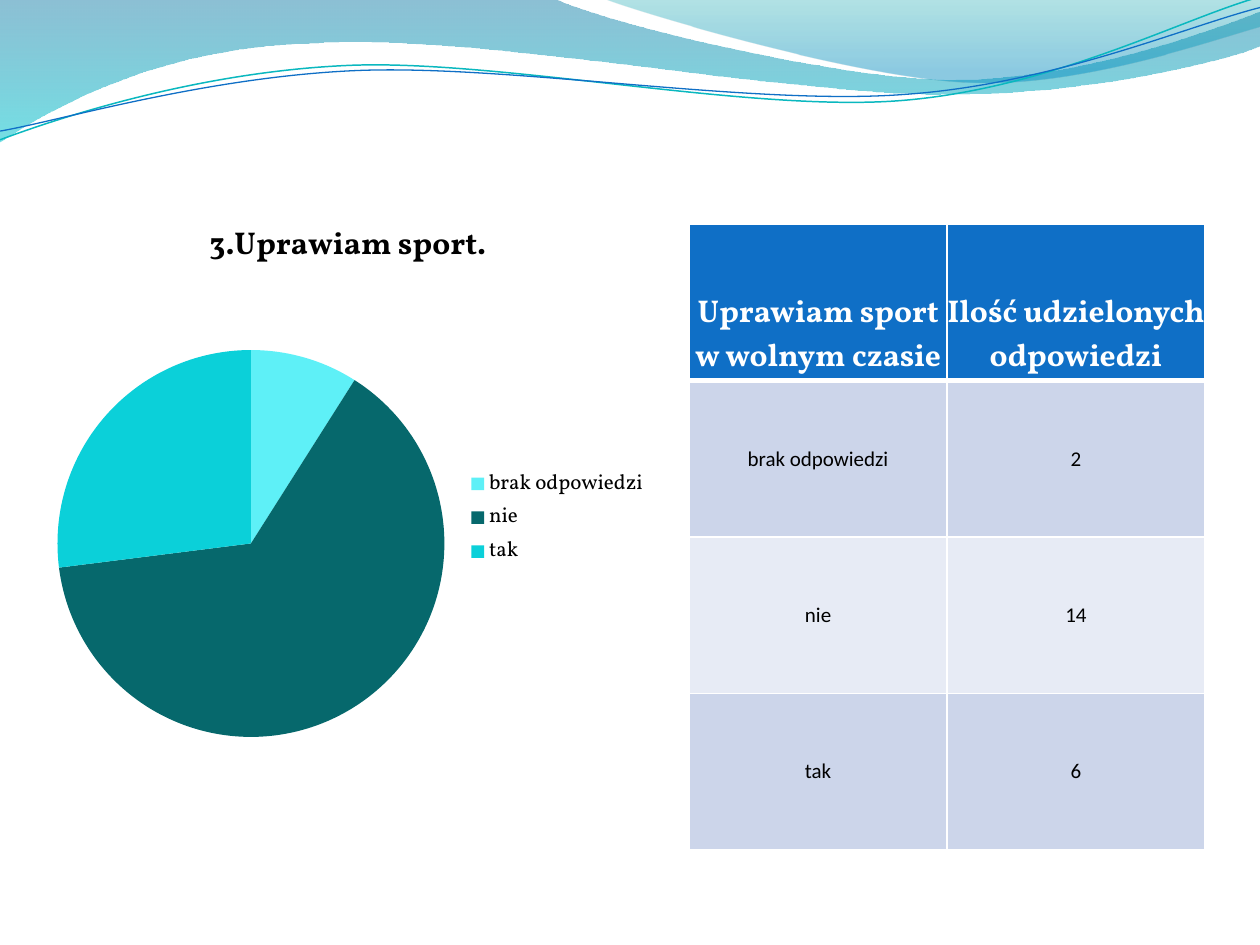
from lxml import etree
from pptx import Presentation
from pptx.chart.data import CategoryChartData
from pptx.dml.color import RGBColor
from pptx.enum.chart import XL_CHART_TYPE, XL_LEGEND_POSITION
from pptx.enum.text import MSO_ANCHOR, PP_ALIGN
from pptx.oxml.ns import qn
from pptx.util import Pt

PIE = XL_CHART_TYPE.PIE
LEGEND_RIGHT = XL_LEGEND_POSITION.RIGHT
BOTTOM, MIDDLE = MSO_ANCHOR.BOTTOM, MSO_ANCHOR.MIDDLE
CENTER = PP_ALIGN.CENTER

HEADING_FONT, BODY_FONT = "Vollkorn", "Calibri"

BANDS = [
    ([(0, 0), (316.8, -0.7),
      (342.7, 12.2, 478.1, 45.4, 545.8, 45.4),
      (614.2, 45.4, 689.8, 18.7, 720, 6.5),
      (720.7, 25.9),
      (709.9, 31.7, 626.4, 54.7, 537.1, 54),
      (447.8, 54, 275, 20.2, 185, 24.5),
      (92.9, 25.9, 33.1, 59.8, -0.7, 81.4),
      (0, 0)],
     [(0, "0074A1", 45), (1, "00C6CF", 55)]),
    ([(344.9, -0.7),
      (366.5, 7.9, 491, 44.6, 553.7, 46.8),
      (616.3, 49.7, 691.9, 23, 720, 15.1),
      (720, 0), (344.9, -0.7)],
     [(0, "00A1A9", 30), (0.8, "008BBF", 45)]),
]
STRANDS = [
    ([(0, 79.9),
      (34.6, 67, 113.8, 41, 199.4, 37.4),
      (284.4, 33.8, 427, 64.1, 513.4, 57.6),
      (599.8, 51.1, 675.4, 10.8, 718.6, -1.4)], "0AB8BF", 0.85),
    ([(0, 74.9),
      (33.8, 69.1, 118.1, 43.9, 203.8, 40.3),
      (290.2, 36.7, 429.8, 60.5, 516.2, 54),
      (601.9, 48.2, 677.5, 15.1, 720, 4.3)], "0F6FC6", 0.75),
]

ANSWER_ROWS = [
    ("Uprawiam sport w wolnym czasie", "Ilość udzielonych odpowiedzi"),
    ("brak odpowiedzi", "2"),
    ("nie", "14"),
    ("tak", "6"),
]
HEADER_FILL, ROW_FILLS = "0F6FC6", ("E7EBF5", "CCD5EA")
TABLE_BOX = (393.8, 128.2, 294.8, 357.4)

CHART_TITLE = "3.Uprawiam sport."
SLICES = [("brak odpowiedzi", 9, "5EF0F7"), ("nie", 64, "06686C"), ("tak", 27, "0BD0D9")]
CHART_BOX = (20.2, 111.6, 357.1, 368.6)
PLOT_LAYOUT = [("layoutTarget", "inner"), ("xMode", "edge"), ("yMode", "edge"),
               ("x", 0.03), ("y", 0.24), ("w", 0.63), ("h", 0.6)]


def rgb(value):
    return RGBColor.from_string(value)


def set_font(font, name, size, color, bold):
    font.name, font.size, font.bold = name, Pt(size), bold
    font.color.rgb = rgb(color)


def add_wave(slide, steps, close):
    start, *rest = [(Pt(x), Pt(y)) for step in steps for x, y in zip(step[::2], step[1::2])]
    builder = slide.shapes.build_freeform(*start)
    builder.add_line_segments(rest, close=close)
    wave = builder.convert_to_shape()
    wave.shadow.inherit = False

    segments = iter(list(wave._element.iter(qn("a:lnTo"))))
    for step in steps[1:]:
        segment = next(segments)
        if len(step) == 6:
            segment.addprevious(curve := etree.Element(qn("a:cubicBezTo")))
            for corner in (segment, next(segments), next(segments)):
                curve.append(corner[0])
                corner.getparent().remove(corner)
    return wave


def add_band(slide, steps, stops):
    band = add_wave(slide, steps, True)
    band.line.fill.background()
    band.fill.gradient()
    band.fill.gradient_angle = 270
    for stop, (position, color, _) in zip(band.fill.gradient_stops, stops):
        stop.position = position
        stop.color.rgb = rgb(color)
    gradient = band._element.spPr.find(qn("a:gradFill"))
    for color_node, (_, _, opacity) in zip(gradient.iter(qn("a:srgbClr")), stops):
        etree.SubElement(color_node, qn("a:alpha"), val=str(opacity * 1000))


def add_strand(slide, steps, color, width):
    strand = add_wave(slide, steps, False)
    strand.fill.background()
    strand.line.color.rgb = rgb(color)
    strand.line.width = Pt(width)


def set_borders(cell, top, bottom):
    properties = cell._tc.get_or_add_tcPr()
    for index, (side, width) in enumerate((("L", 1), ("R", 1), ("T", top), ("B", bottom))):
        border = etree.Element(qn(f"a:ln{side}"), w=str(Pt(width)))
        fill = etree.SubElement(border, qn("a:solidFill"))
        etree.SubElement(fill, qn("a:srgbClr"), val="FFFFFF")
        properties.insert(index, border)


def add_answer_table(slide):
    table = slide.shapes.add_table(len(ANSWER_ROWS), len(ANSWER_ROWS[0]),
                                   *map(Pt, TABLE_BOX)).table
    for r, row in enumerate(ANSWER_ROWS):
        header = r == 0
        for c, text in enumerate(row):
            cell = table.cell(r, c)
            cell.text = text
            cell.margin_left = cell.margin_right = cell.margin_top = cell.margin_bottom = 0
            cell.vertical_anchor = BOTTOM if header else MIDDLE
            cell.fill.solid()
            cell.fill.fore_color.rgb = rgb(HEADER_FILL if header else ROW_FILLS[r % 2])
            set_borders(cell, 3 if r == 1 else 1, 3 if header else 1)
            paragraph = cell.text_frame.paragraphs[0]
            paragraph.alignment = CENTER
            if header:
                set_font(paragraph.font, HEADING_FONT, 18, "FFFFFF", True)
            else:
                set_font(paragraph.font, BODY_FONT, 12, "000000", False)


def add_answer_chart(slide):
    data = CategoryChartData()
    data.categories = [name for name, _, _ in SLICES]
    data.add_series("Series 1", [share for _, share, _ in SLICES])
    chart = slide.shapes.add_chart(PIE, *map(Pt, CHART_BOX), data).chart
    set_font(chart.font, HEADING_FONT, 10, "000000", False)
    chart.has_title = True
    chart.chart_title.text_frame.text = CHART_TITLE
    set_font(chart.chart_title.text_frame.paragraphs[0].font, HEADING_FONT, 18, "000000", True)
    chart.has_legend = True
    chart.legend.position = LEGEND_RIGHT
    chart.legend.include_in_layout = False
    set_font(chart.legend.font, HEADING_FONT, 12, "000000", False)

    plot = chart.plots[0]
    plot.vary_by_categories = True
    for i, (_, _, color) in enumerate(SLICES):
        fill = plot.series[0].points[i].format.fill
        fill.solid()
        fill.fore_color.rgb = rgb(color)

    plot_area = chart._chartSpace.chart.plotArea
    for old_layout in plot_area.findall(qn("c:layout")):
        plot_area.remove(old_layout)
    layout = etree.Element(qn("c:layout"))
    manual = etree.SubElement(layout, qn("c:manualLayout"))
    for tag, value in PLOT_LAYOUT:
        etree.SubElement(manual, qn(f"c:{tag}"), val=str(value))
    plot_area.insert(0, layout)


def main():
    deck = Presentation()
    deck.slide_width, deck.slide_height = Pt(720), Pt(540)
    slide = deck.slides.add_slide(deck.slide_layouts[6])
    for band in BANDS:
        add_band(slide, *band)
    for strand in STRANDS:
        add_strand(slide, *strand)
    add_answer_table(slide)
    add_answer_chart(slide)
    deck.save("out.pptx")


if __name__ == "__main__":
    main()
